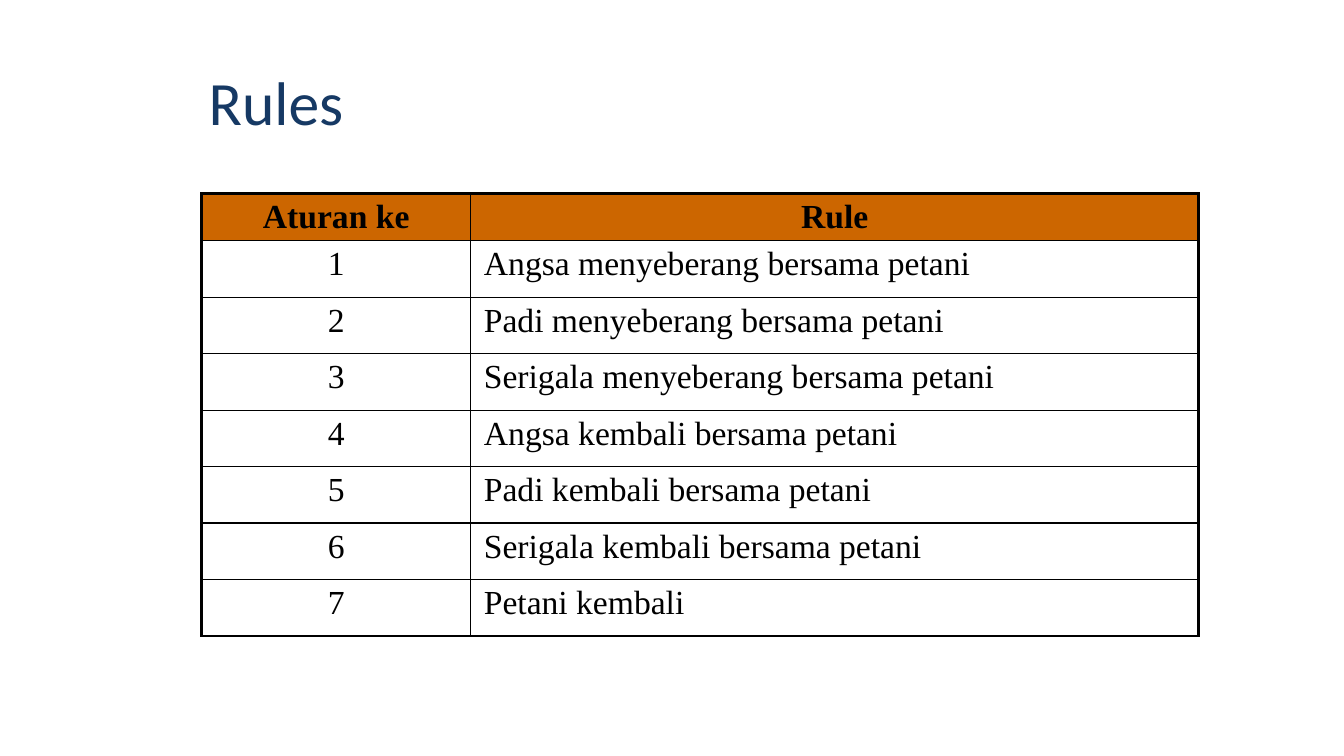
import pptx
import pptx.util
import pptx.dml.color
import pptx.enum.text
import pptx.oxml
import pptx.oxml.ns

# Content
TITLE = "Rules"
HEADER = ("Aturan ke", "Rule")
RULES = [
    "Angsa menyeberang bersama petani",
    "Padi menyeberang bersama petani",
    "Serigala menyeberang bersama petani",
    "Angsa kembali bersama petani",
    "Padi kembali bersama petani",
    "Serigala kembali bersama petani",
    "Petani kembali",
]

# Look
COLOURS = {"title": "163964", "header": "CC6600", "text": "000000", "border": "000000"}
COLUMN_WIDTHS = (2.67, 7.22)
HEADER_HEIGHT, RULE_HEIGHT = 0.47, 0.56
OUTER_LINE, INNER_LINE = 2.25, 1
Inches, Pt = pptx.util.Inches, pptx.util.Pt
ALIGN, ANCHOR = pptx.enum.text.PP_ALIGN, pptx.enum.text.MSO_ANCHOR


def write(frame, text, font="Times New Roman", size=24, colour="text", bold=False,
          align=ALIGN.LEFT, line_spacing=None):
    para = frame.paragraphs[0]
    para.alignment = align
    para.line_spacing = line_spacing
    span = para.add_run()
    span.text = text
    span.font.name = font
    span.font.size = Pt(size)
    span.font.bold = bold
    span.font.color.rgb = pptx.dml.color.RGBColor.from_string(COLOURS[colour])


def set_borders(cell, outer_sides):
    properties = cell._tc.get_or_add_tcPr()
    for place, side in enumerate("LRTB"):
        width = OUTER_LINE if side in outer_sides else INNER_LINE
        line = pptx.oxml.parse_xml(
            f'<a:ln{side} {pptx.oxml.ns.nsdecls("a")} w="{Pt(width)}">'
            f'<a:solidFill><a:srgbClr val="{COLOURS["border"]}"/></a:solidFill>'
            f'</a:ln{side}>')
        properties.insert(place, line)


deck = pptx.Presentation()
deck.slide_width, deck.slide_height = Inches(13.33), Inches(7.5)
page = deck.slides.add_slide(deck.slide_layouts[5])

# Title
title = page.shapes.title
title.left, title.top, title.width, title.height = map(Inches, (1.97, 0.42, 9.67, 1.25))
title.text_frame.vertical_anchor = ANCHOR.MIDDLE
write(title.text_frame, TITLE, font="Calibri", size=44, colour="title", line_spacing=0.9)

# Table of rules
rows = [HEADER] + [(str(number), rule) for number, rule in enumerate(RULES, 1)]
heights = [HEADER_HEIGHT] + [RULE_HEIGHT] * len(RULES)
table = page.shapes.add_table(
    len(rows), len(HEADER), Inches(2), Inches(1.92),
    Inches(sum(COLUMN_WIDTHS)), Inches(sum(heights))).table
table.first_row = table.horz_banding = False
for column, width in zip(table.columns, COLUMN_WIDTHS):
    column.width = Inches(width)

for row_index, (texts, height) in enumerate(zip(rows, heights)):
    table.rows[row_index].height = Inches(height)
    is_header = row_index == 0
    for column_index, text in enumerate(texts):
        cell = table.cell(row_index, column_index)
        cell.margin_left = cell.margin_right = Inches(0.13)
        cell.margin_top = cell.margin_bottom = Inches(0.05)
        centred = is_header or column_index == 0
        write(cell.text_frame, text, bold=is_header,
              align=ALIGN.CENTER if centred else ALIGN.LEFT)
        if is_header:
            cell.fill.solid()
            cell.fill.fore_color.rgb = pptx.dml.color.RGBColor.from_string(COLOURS["header"])
        else:
            cell.fill.background()
        outer_sides = "L" if column_index == 0 else "R"
        if is_header:
            outer_sides += "T"
        elif row_index == len(RULES):
            outer_sides += "B"
        set_borders(cell, outer_sides)

deck.save("out.pptx")
